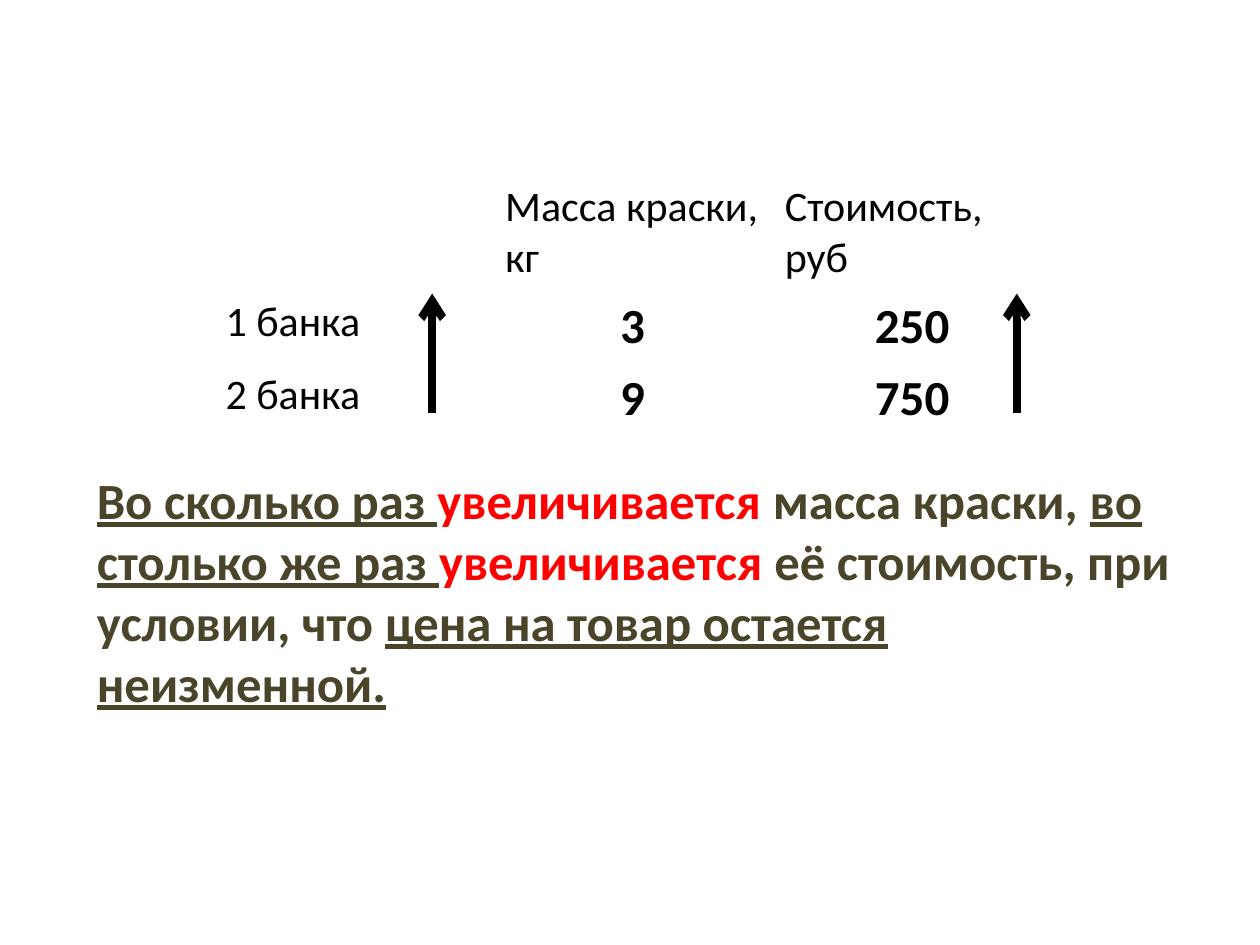
from dataclasses import dataclass

from lxml.etree import SubElement
from pptx import Presentation
from pptx.dml.color import RGBColor
from pptx.enum.shapes import MSO_CONNECTOR
from pptx.enum.text import MSO_AUTO_SIZE, PP_ALIGN
from pptx.oxml.ns import qn
from pptx.util import Inches, Pt


@dataclass(frozen=True)
class Theme:
    font: str = "Calibri"
    black: RGBColor = RGBColor(0x00, 0x00, 0x00)
    olive: RGBColor = RGBColor(0x4A, 0x45, 0x2A)
    red: RGBColor = RGBColor(0xFF, 0x00, 0x00)
    label: Pt = Pt(24)
    value: Pt = Pt(28)
    rule: Pt = Pt(29)
    arrow: Pt = Pt(4.5)


class SlideBuilder:
    def __init__(self, page, theme):
        self.page = page
        self.theme = theme

    def style(self, font, size, color, bold):
        font.name = self.theme.font
        font.size = size
        font.bold = bold
        font.color.rgb = color

    def table(self, left, top, column_width, row_heights, rows):
        columns = len(rows[0])
        table = self.page.shapes.add_table(
            len(rows), columns, Inches(left), Inches(top),
            Inches(column_width * columns), Inches(sum(row_heights))).table
        table.first_row = False
        table.horz_banding = False
        for column in table.columns:
            column.width = Inches(column_width)
        for row, height, texts in zip(table.rows, row_heights, rows):
            row.height = Inches(height)
            for cell, text in zip(row.cells, texts):
                self.cell(cell, text)

    def cell(self, cell, text):
        cell.fill.background()
        cell.text = text
        para = cell.text_frame.paragraphs[0]
        is_value = text.isdigit()
        size = self.theme.value if is_value else self.theme.label
        self.style(para.font, size, self.theme.black, is_value)
        para.alignment = PP_ALIGN.CENTER if is_value else PP_ALIGN.LEFT

    def statement(self, left, top, width, height, spans):
        box = self.page.shapes.add_textbox(
            Inches(left), Inches(top), Inches(width), Inches(height))
        frame = box.text_frame
        frame.word_wrap = True
        frame.auto_size = MSO_AUTO_SIZE.SHAPE_TO_FIT_TEXT
        para = frame.paragraphs[0]
        self.style(para.font, self.theme.rule, self.theme.olive, True)
        for text, color, underline in spans:
            span = para.add_run()
            span.text = text
            span.font.color.rgb = color
            span.font.underline = underline

    def up_arrow(self, x, top, bottom):
        arrow = self.page.shapes.add_connector(
            MSO_CONNECTOR.STRAIGHT, Inches(x), Inches(bottom), Inches(x), Inches(top))
        arrow.line.color.rgb = self.theme.black
        arrow.line.width = self.theme.arrow
        SubElement(arrow.line._get_or_add_ln(), qn("a:tailEnd"), type="arrow")
        SubElement(arrow._element.spPr, qn("a:effectLst"))


def main():
    deck = Presentation()
    deck.slide_width, deck.slide_height = Inches(10), Inches(7.5)
    theme = Theme()
    builder = SlideBuilder(deck.slides.add_slide(deck.slide_layouts[6]), theme)

    builder.table(1.69, 1.39, 2.22, [0.91, 0.56, 0.56], [
        ["", "Масса краски, кг", "Стоимость, руб"],
        ["1 банка", "3", "250"],
        ["2 банка", "9", "750"],
    ])
    builder.statement(0.67, 3.67, 8.82, 2.05, [
        ("Во сколько раз ", theme.olive, True),
        ("увеличивается ", theme.red, False),
        ("масса краски, ", theme.olive, False),
        ("во столько же раз ", theme.olive, True),
        ("увеличивается ", theme.red, False),
        ("её стоимость, при условии, что ", theme.olive, False),
        ("цена на товар остается неизменной.", theme.olive, True),
    ])
    for x in (3.43, 8.07):
        builder.up_arrow(x, 2.33, 3.28)

    deck.save("out.pptx")


if __name__ == "__main__":
    main()
